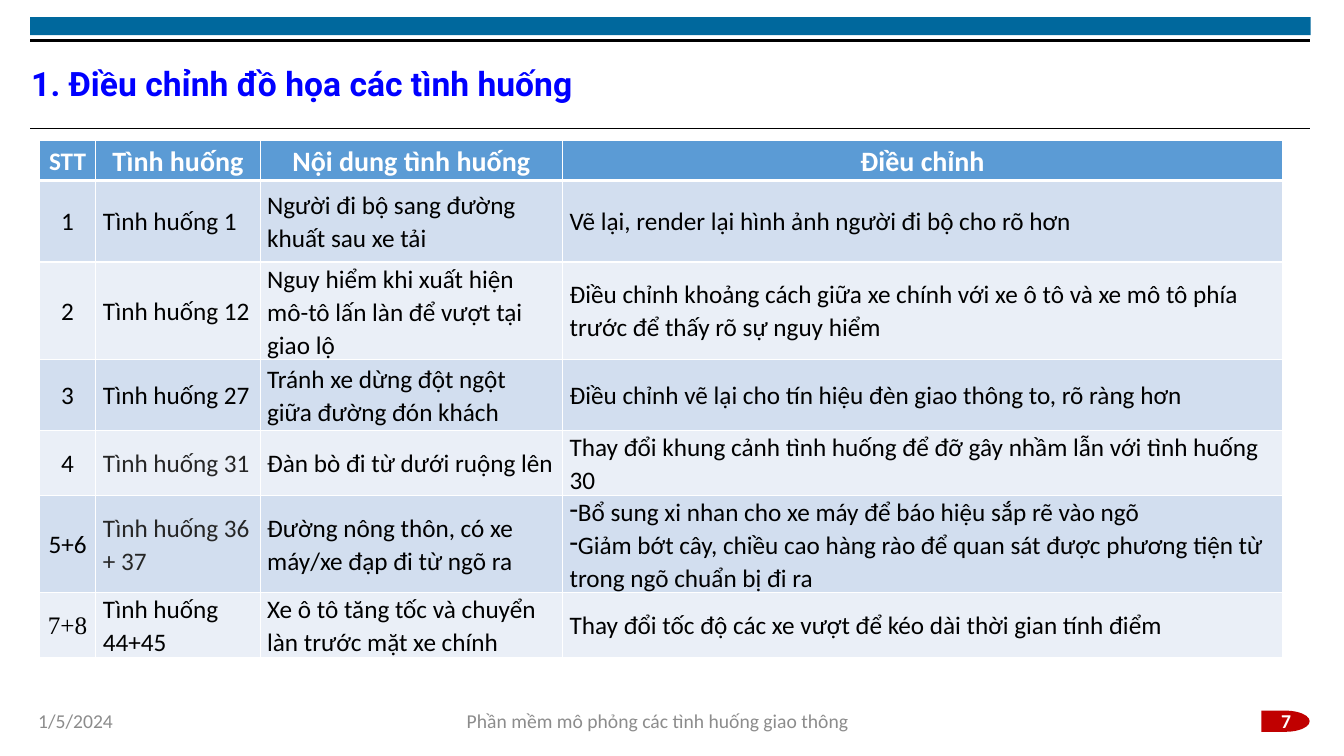
from dataclasses import dataclass

from lxml.etree import SubElement
from pptx import Presentation
from pptx.dml.color import RGBColor
from pptx.enum.shapes import MSO_CONNECTOR, MSO_SHAPE
from pptx.enum.text import MSO_ANCHOR, PP_ALIGN
from pptx.oxml import parse_xml
from pptx.oxml.ns import nsdecls, qn
from pptx.util import Inches, Pt


@dataclass(frozen=True)
class Theme:
    band: str = "00689D"
    badge: str = "C00000"
    title: str = "0000FF"
    footer: str = "8C8C8C"
    ink: str = "000000"
    soft_ink: str = "262626"
    white: str = "FFFFFF"
    header: str = "5B9BD5"
    stripes: tuple = ("D2DEEF", "EAEFF7")
    title_size: float = 24
    header_size: float = 20
    body_size: float = 18
    footer_size: float = 14
    body_font: str = "Calibri"
    title_font: str = "Roboto"
    serif_font: str = "Times New Roman"


@dataclass(frozen=True)
class Cell:
    """Table text with the few settings that vary between cells."""
    paragraphs: tuple
    color: str
    size: float
    font: str
    bold: bool = False
    centered: bool = False
    bulleted: bool = False


class SlideBuilder:
    """Places elements on a grid of ten columns and ten rows per inch."""

    def __init__(self, slide, theme):
        self.slide = slide
        self.theme = theme

    def grid(self, *units):
        return [Inches(unit / 10) for unit in units]

    def add_run(self, paragraph, text, size, color, font, bold=False):
        run = paragraph.add_run()
        run.text = text
        run.font.size = Pt(size)
        run.font.name = font
        run.font.bold = bold
        run.font.color.rgb = RGBColor.from_string(color)

    def shape(self, kind, place, color):
        shape = self.slide.shapes.add_shape(kind, *self.grid(*place))
        shape.shadow.inherit = False
        shape.fill.solid()
        shape.fill.fore_color.rgb = RGBColor.from_string(color)
        shape.line.fill.background()

    def rule(self, left, right, top, width):
        line = self.slide.shapes.add_connector(
            MSO_CONNECTOR.STRAIGHT, *self.grid(left, top, right, top))
        line.line.width = Pt(width)
        line.line.color.rgb = RGBColor.from_string(self.theme.ink)
        SubElement(line._element.spPr, qn("a:effectLst"))

    def text(self, place, words, size, color, font, bold=False,
             align=PP_ALIGN.LEFT, spacing=1.0, inset=(1, 0.5)):
        frame = self.slide.shapes.add_textbox(*self.grid(*place)).text_frame
        frame.word_wrap = True
        frame.vertical_anchor = MSO_ANCHOR.MIDDLE
        across, down = self.grid(*inset)
        frame.margin_left = frame.margin_right = across
        frame.margin_top = frame.margin_bottom = down
        paragraph = frame.paragraphs[0]
        paragraph.alignment = align
        paragraph.line_spacing = spacing
        self.add_run(paragraph, words, size, color, font, bold)

    def table(self, left, top, columns, rows, contents):
        table = self.slide.shapes.add_table(
            len(rows), len(columns),
            *self.grid(left, top, sum(columns), sum(rows))).table
        for column, width in zip(table.columns, self.grid(*columns)):
            column.width = width
        for row, height in zip(table.rows, self.grid(*rows)):
            row.height = height
        for row_index, row in enumerate(contents):
            fill = self.theme.stripes[(row_index - 1) % 2] if row_index else self.theme.header
            for column_index, content in enumerate(row):
                cell = table.cell(row_index, column_index)
                self.fill_cell(cell, content, fill)
                self.border_cell(cell, top=3 if row_index == 1 else 1,
                                 bottom=3 if row_index == 0 else 1)

    def fill_cell(self, cell, content, fill):
        cell.fill.solid()
        cell.fill.fore_color.rgb = RGBColor.from_string(fill)
        cell.vertical_anchor = MSO_ANCHOR.MIDDLE
        cell.margin_left = cell.margin_right = Inches(0.07)
        cell.margin_top = cell.margin_bottom = 0
        frame = cell.text_frame
        for index, words in enumerate(content.paragraphs):
            paragraph = frame.add_paragraph() if index else frame.paragraphs[0]
            paragraph.alignment = PP_ALIGN.CENTER if content.centered else PP_ALIGN.LEFT
            paragraph.line_spacing = 1.07
            if content.bulleted:
                properties = paragraph._p.get_or_add_pPr()
                properties.set("marL", "0")
                properties.set("indent", str(-Inches(0.38)))
                SubElement(properties, qn("a:buChar")).set("char", "-")
            self.add_run(paragraph, words, content.size, content.color,
                         content.font, content.bold)

    def border_cell(self, cell, top, bottom):
        properties = cell._tc.get_or_add_tcPr()
        for index, (side, width) in enumerate(
                [("lnL", 1), ("lnR", 1), ("lnT", top), ("lnB", bottom)]):
            properties.insert(index, parse_xml(
                f'<a:{side} {nsdecls("a")} w="{Pt(width)}"><a:solidFill>'
                f'<a:srgbClr val="{self.theme.white}"/></a:solidFill></a:{side}>'))


HEADINGS = ("STT", "Tình huống", "Nội dung tình huống", "Điều chỉnh")
SITUATIONS = (
    ("1", "Tình huống 1", "Người đi bộ sang đường khuất sau xe tải",
     "Vẽ lại, render lại hình ảnh người đi bộ cho rõ hơn"),
    ("2", "Tình huống 12", "Nguy hiểm khi xuất hiện mô-tô lấn làn để vượt tại giao lộ",
     "Điều chỉnh khoảng cách giữa xe chính với xe ô tô và xe mô tô phía trước "
     "để thấy rõ sự nguy hiểm"),
    ("3", "Tình huống 27", "Tránh xe dừng đột ngột giữa đường đón khách",
     "Điều chỉnh vẽ lại cho tín hiệu đèn giao thông to, rõ ràng hơn"),
    ("4", "Tình huống 31", "Đàn bò đi từ dưới ruộng lên",
     "Thay đổi khung cảnh tình huống để đỡ gây nhầm lẫn với tình huống 30"),
    ("5+6", "Tình huống 36 + 37", "Đường nông thôn, có xe máy/xe đạp đi từ ngõ ra",
     ("Bổ sung xi nhan cho xe máy để báo hiệu sắp rẽ vào ngõ",
      "Giảm bớt cây, chiều cao hàng rào để quan sát được phương tiện từ "
      "trong ngõ chuẩn bị đi ra")),
    ("7+8", "Tình huống 44+45", "Xe ô tô tăng tốc và chuyển làn trước mặt xe chính",
     "Thay đổi tốc độ các xe vượt để kéo dài thời gian tính điểm"),
)
SOFT_CELLS = ("Tình huống 31", "Tình huống 36 + 37")
SERIF_CELLS = ("7+8",)


def table_contents(theme):
    yield [Cell((words,), theme.white, theme.header_size if index else theme.body_size,
                theme.body_font, bold=True, centered=True)
           for index, words in enumerate(HEADINGS)]
    for situation in SITUATIONS:
        yield [Cell(words if isinstance(words, tuple) else (words,),
                    theme.soft_ink if words in SOFT_CELLS else theme.ink,
                    theme.body_size,
                    theme.serif_font if words in SERIF_CELLS else theme.body_font,
                    centered=index == 0, bulleted=isinstance(words, tuple))
               for index, words in enumerate(situation)]


def main():
    theme = Theme()
    presentation = Presentation()
    presentation.slide_width, presentation.slide_height = Inches(13.33), Inches(7.5)
    slide = presentation.slides.add_slide(presentation.slide_layouts[6])
    builder = SlideBuilder(slide, theme)

    # Header band, rules and page badge
    builder.shape(MSO_SHAPE.RECTANGLE, (3, 1.7, 127, 1.8), theme.band)
    builder.rule(3, 129.9, 12.7, 0.6)
    builder.rule(3, 129.9, 4, 2.25)
    builder.shape(MSO_SHAPE.FLOWCHART_DELAY, (125.1, 70.5, 4.8, 2.1), theme.badge)

    # Title
    builder.text((3.1, 5, 126.9, 6.9), "1. Điều chỉnh đồ họa các tình huống",
                 theme.title_size, theme.title, theme.title_font, bold=True,
                 spacing=0.9, inset=(0, 0))

    # Footer
    footer = (theme.footer_size, theme.footer, theme.body_font)
    builder.text((2.8, 69.5, 13.1, 4), "1/5/2024", *footer)
    builder.text((18.1, 69.5, 94.3, 4), "Phần mềm mô phỏng các tình huống giao thông",
                 *footer, align=PP_ALIGN.CENTER)
    builder.text((125.1, 69.5, 4.9, 4), "7", theme.footer_size, theme.white,
                 theme.body_font, bold=True, align=PP_ALIGN.CENTER)

    # Table of situations
    builder.table(3.9, 13.9, columns=(5.6, 16.3, 30, 71.4),
                  rows=(4, 8.1, 8.6, 7.1, 5.8, 5.4, 4),
                  contents=table_contents(theme))

    presentation.save("out.pptx")


if __name__ == "__main__":
    main()
